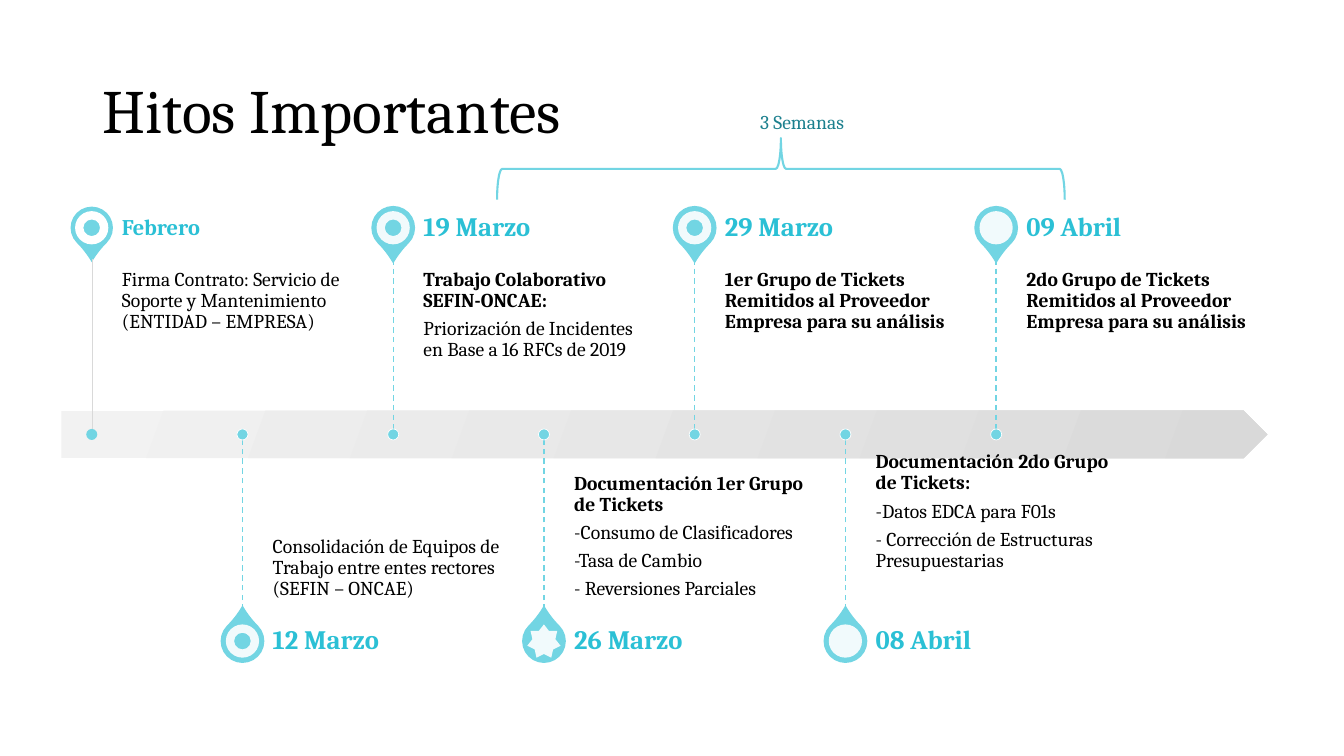
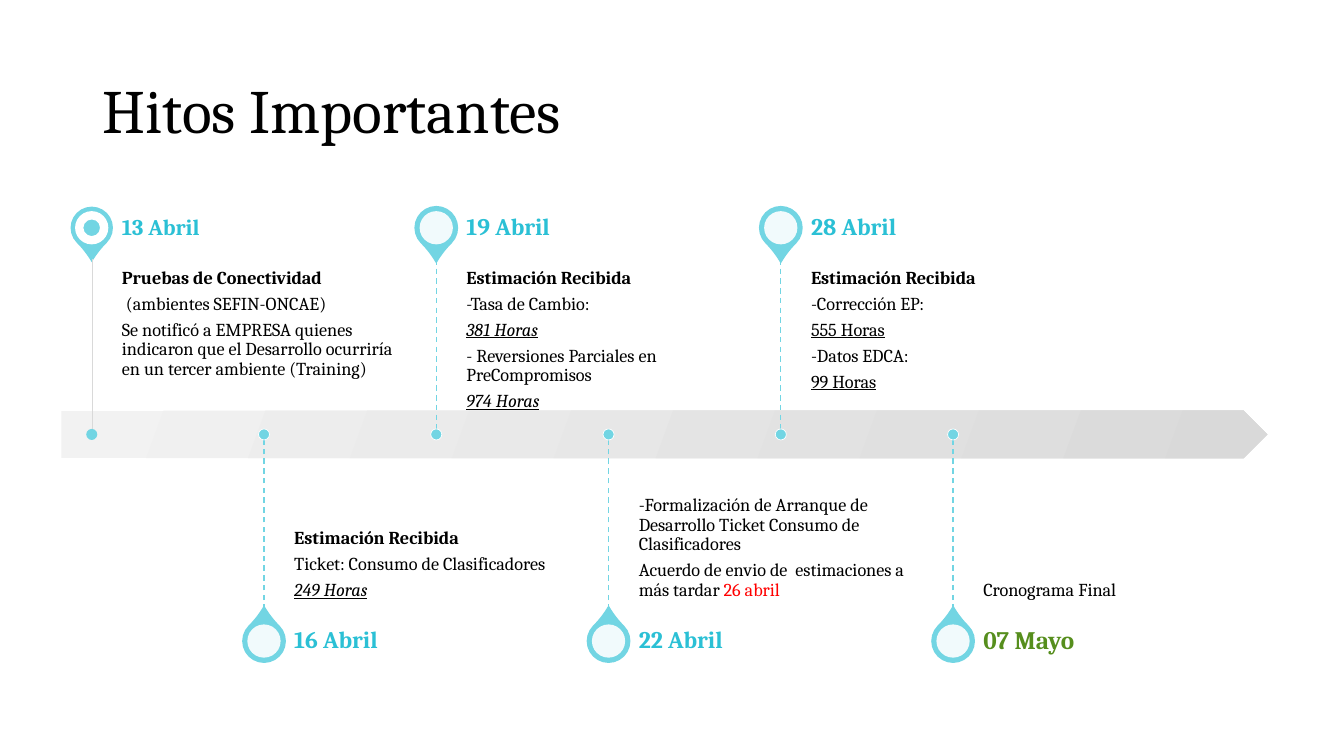
import pptx
import pptx.util
import pptx.dml.color
import pptx.enum.dml
import pptx.enum.shapes
import pptx.enum.text
import pptx.oxml.ns
import lxml.etree

TITLE = "Hitos Importantes"
SPAN = "3 Semanas"

MARCH = {
    "size": 14,
    "nodes": [
        ("Febrero", 16, "date", "donut", [
            [("Firma Contrato: Servicio de Soporte y Mantenimiento (ENTIDAD – EMPRESA)", "")]]),
        ("12 Marzo", 19, "date", "donut", [
            [("Consolidación de Equipos de Trabajo entre entes rectores (SEFIN – ONCAE)", "")]]),
        ("19 Marzo", 19, "date", "donut", [
            [("Trabajo Colaborativo SEFIN-ONCAE:", "b")],
            [("Priorización de Incidentes en Base a 16 RFCs de 2019", "")]]),
        ("26 Marzo", 19, "date", "star", [
            [("Documentación 1er Grupo de Tickets", "b")],
            [("-Consumo de Clasificadores", "")],
            [("-Tasa de Cambio", "")],
            [("- Reversiones Parciales", "")]]),
        ("29 Marzo", 19, "date", "donut", [
            [("1er Grupo de Tickets Remitidos al Proveedor Empresa para su análisis", "b")]]),
        ("08 Abril", 19, "date", "disc", [
            [("Documentación 2do Grupo de Tickets:", "b")],
            [("-Datos EDCA para F01s", "")],
            [("- Corrección de Estructuras Presupuestarias", "")]]),
        ("09 Abril", 19, "date", "disc", [
            [("2do Grupo de Tickets Remitidos al Proveedor Empresa para su análisis", "b")]]),
    ],
}
APRIL = {
    "size": 13,
    "nodes": [
        ("13 Abril", 16, "date", "donut", [
            [("Pruebas de Conectividad", "b")],
            [(" (ambientes SEFIN-ONCAE)", "")],
            [("Se notificó a EMPRESA quienes indicaron que el Desarrollo ocurriría en un tercer ambiente (Training)", "")]]),
        ("16 Abril", 17, "date", "disc", [
            [("Estimación Recibida", "b")],
            [("Ticket: Consumo de Clasificadores", "")],
            [("249 Horas", "iu")]]),
        ("19 Abril", 17, "date", "disc", [
            [("Estimación Recibida", "b")],
            [("-Tasa de Cambio:", "")],
            [("381 Horas", "iu")],
            [("- Reversiones Parciales en PreCompromisos", "")],
            [("974 Horas", "iu")]]),
        ("22 Abril", 17, "date", "disc", [
            [("-Formalización de Arranque de Desarrollo Ticket Consumo de Clasificadores", "")],
            [("Acuerdo de envio de  estimaciones a más tardar ", ""), ("26 abril", "r")]]),
        ("28 Abril", 17, "date", "disc", [
            [("Estimación Recibida", "b")],
            [("-Corrección EP:", "")],
            [("555 Horas", "u")],
            [("-Datos EDCA:", "")],
            [("99 Horas", "u")]]),
        ("07 Mayo", 18, "done", "disc", [
            [("Cronograma Final", "")]]),
    ],
}
LIFT = {"08 Abril": 0.28}

THEME = {
    "font": "Cambria", "title": 44, "label": 14,
    "ink": "000000", "pin": "72D5E3", "date": "2BC0D5", "done": "568E1D",
    "span": "1C808E", "alert": "FF0000", "white": "FFFFFF",
    "pale": "F2F2F2", "grey": "D9D9D9",
}
WIDE, HIGH = 13.33, 7.5
LEFT, BAND, THICK, MID = 0.61, 11.96, 0.47, 4.31
STEM, REACH, HEAD = 1.74, 2.05, 0.61
PIN, ICON, DOT, GAP = 0.42, 0.33, 0.11, 0.3

KIND = pptx.enum.shapes.MSO_SHAPE
ANCHOR = pptx.enum.text.MSO_ANCHOR
FIT = pptx.enum.text.MSO_AUTO_SIZE
ALIGN = pptx.enum.text.PP_ALIGN
ICONS = {"donut": KIND.DONUT, "star": KIND.STAR_7_POINT, "disc": KIND.OVAL}
inch = pptx.util.Inches
qn = pptx.oxml.ns.qn


def tint(name):
    return pptx.dml.color.RGBColor.from_string(THEME[name])


def box(left, top, wide, high):
    return [inch(v) for v in (left, top, wide, high)]


def style(run, size, color, marks=""):
    font = run.font
    font.name, font.size = THEME["font"], pptx.util.Pt(size)
    font.color.rgb = tint("alert" if "r" in marks else color)
    font.bold, font.italic, font.underline = ("b" in marks, "i" in marks, "u" in marks)


def shape(slide, kind, area, fill=None, line=None, width=1, alpha=None):
    item = slide.shapes.add_shape(kind, *box(*area))
    item.shadow.inherit = False
    if fill:
        item.fill.solid()
        item.fill.fore_color.rgb = tint(fill)
    else:
        item.fill.background()
    if line:
        item.line.color.rgb = tint(line)
        item.line.width = pptx.util.Pt(width)
    else:
        item.line.fill.background()
    if alpha:
        color = item._element.spPr.find(qn("a:solidFill")).find(qn("a:srgbClr"))
        lxml.etree.SubElement(color, qn("a:alpha")).set("val", str(alpha * 1000))
    return item


def center(slide, kind, x, y, size, *look, **more):
    return shape(slide, kind, (x - size / 2, y - size / 2, size, size), *look, **more)


def text(slide, area, paras, size, color, anchor, pads, wrap=True):
    frame = slide.shapes.add_textbox(*box(*area)).text_frame
    frame.word_wrap, frame.auto_size = wrap, FIT.NONE
    frame.vertical_anchor = anchor
    (frame.margin_left, frame.margin_top,
     frame.margin_right, frame.margin_bottom) = box(*pads)
    frame.text = "\n".join(runs[0][0] for runs in paras)
    for para, runs in zip(frame.paragraphs, paras):
        para.line_spacing = 0.9
        para.space_after = pptx.util.Pt(round(size * 0.35, 1))
        for words, _ in runs[1:]:
            para.add_run().text = words
        for run, (_, marks) in zip(para.runs, runs):
            style(run, size, color, marks)


def stem(slide, x, end, first):
    line = slide.shapes.add_connector(
        pptx.enum.shapes.MSO_CONNECTOR.STRAIGHT, inch(x), inch(end), inch(x), inch(MID))
    line.line.color.rgb = tint("grey" if first else "pin")
    line.line.width = pptx.util.Pt(0.25 if first else 1)
    if not first:
        line.line.dash_style = pptx.enum.dml.MSO_LINE.DASH
    lxml.etree.SubElement(line._element.spPr, qn("a:effectLst"))


def node(slide, x, wide, size, index, entry):
    date, large, color, icon, paras = entry
    first, up = index == 0, index % 2 == 0
    side = -1 if up else 1
    y = MID + side * REACH
    drop = center(slide, KIND.TEAR, x, y, PIN, "pin", None if first else "pin")
    drop.adjustments[0] = 1.15
    drop.rotation = 135 if up else 315
    center(slide, ICONS[icon], x, y, ICON, "white", alpha=None if first else 90)
    pad = size / 140
    pads = (0, pad, pad, pad) if up else (0, pad, 0, pad + LIFT.get(date, 0))
    top = MID - STEM if up else MID
    text(slide, (x + GAP, top, wide, STEM), paras, size, "ink",
         ANCHOR.TOP if up else ANCHOR.BOTTOM, pads)
    text(slide, (x + GAP, y - HEAD / 2, wide, HEAD), [[(date, "b")]], large, color,
         ANCHOR.MIDDLE, (0, 0, 0.12, 0))
    stem(slide, x, MID + side * STEM, first)
    center(slide, KIND.OVAL, x, MID, DOT, "pin", None if first else "white", 0.5)


def build(deck, plan):
    slide = deck.slides.add_slide(deck.slide_layouts[5])
    title = slide.shapes.title
    title.left, title.top, title.width, title.height = box(0.92, 0.4, 11.5, 1.45)
    frame = title.text_frame
    frame.text, frame.vertical_anchor = TITLE, ANCHOR.MIDDLE
    para = frame.paragraphs[0]
    para.alignment, para.line_spacing = ALIGN.LEFT, 0.9
    style(para.runs[0], THEME["title"], "ink")

    band = shape(slide, KIND.PENTAGON, (LEFT, MID - THICK / 2, BAND, THICK))
    band.fill.gradient()
    band.fill.gradient_angle = 340
    for stop, name in zip(band.fill.gradient_stops, ("pale", "grey")):
        stop.color.rgb = tint(name)

    nodes = plan["nodes"]
    step = BAND / (len(nodes) + 1)
    start = LEFT + GAP
    wide = LEFT + BAND - start - GAP - step * (len(nodes) - 1)
    for index, entry in enumerate(nodes):
        node(slide, start + index * step, wide, plan["size"], index, entry)
    return slide


def main():
    deck = pptx.Presentation()
    deck.slide_width, deck.slide_height = inch(WIDE), inch(HIGH)
    slide = build(deck, MARCH)
    brace = shape(slide, KIND.LEFT_BRACE, (7.44, -1.14, 0.61, 5.63), None, "pin", 1.5)
    brace.rotation = 90
    text(slide, (7.44, 1.07, 1.13, 0.34), [[(SPAN, "")]], THEME["label"], "span",
         ANCHOR.TOP, (0.1, 0.05, 0.1, 0.05), False)
    build(deck, APRIL)
    deck.save("out.pptx")


if __name__ == "__main__":
    main()
